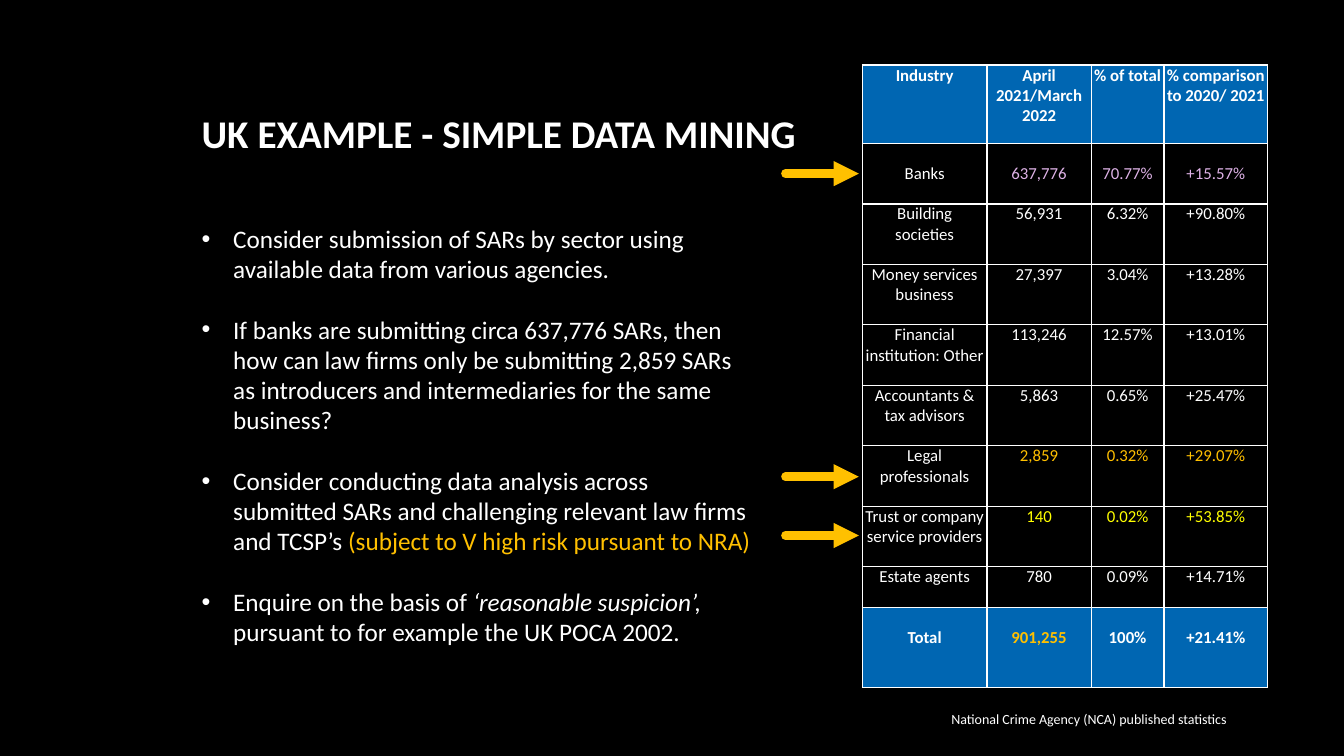
from lxml.etree import SubElement
from pptx import Presentation
from pptx.dml.color import RGBColor
from pptx.enum.shapes import MSO_CONNECTOR as Connector
from pptx.enum.text import MSO_ANCHOR as Anchor, PP_ALIGN as Align
from pptx.oxml.ns import qn
from pptx.util import Pt

WHITE = RGBColor(0xFF, 0xFF, 0xFF)
BLACK = RGBColor(0x00, 0x00, 0x00)
BLUE = RGBColor(0x00, 0x66, 0xB2)
AMBER = RGBColor(0xFF, 0xC0, 0x00)
YELLOW = RGBColor(0xFF, 0xFF, 0x00)
LILAC = RGBColor(0xDE, 0xB2, 0xE6)


def style_font(font, size, color=WHITE, bold=False):
    font.name = "Calibri"
    font.size = Pt(size)
    font.color.rgb = color
    font.bold = bold


def add_text_frame(left, top, width, height):
    box = slide.shapes.add_textbox(Pt(left), Pt(top), Pt(width), Pt(height))
    box.text_frame.word_wrap = True
    return box.text_frame


presentation = Presentation()
presentation.slide_width = Pt(960)
presentation.slide_height = Pt(540)
slide = presentation.slides.add_slide(presentation.slide_layouts[6])
slide.background.fill.solid()
slide.background.fill.fore_color.rgb = BLACK

# Title
title = add_text_frame(137, 54.5, 639, 60.5)
title.vertical_anchor = Anchor.BOTTOM
title.text = "UK EXAMPLE - SIMPLE DATA MINING"
style_font(title.paragraphs[0].runs[0].font, 28, bold=True)

# Bullets: each is a list of (text, color, italic) runs
bullets = [
    [("Consider submission of SARs by sector using available data from various agencies.", WHITE, False)],
    [("If banks are submitting circa 637,776 SARs, then how can law firms only be submitting "
      "2,859 SARs as introducers and intermediaries for the same business?", WHITE, False)],
    [("Consider conducting data analysis across submitted SARs and challenging relevant law firms "
      "and TCSP’s ", WHITE, False),
     ("(subject to V high risk pursuant to NRA)", AMBER, False)],
    [("Enquire on the basis of ", WHITE, False),
     ("‘reasonable suspicion’, ", WHITE, True),
     ("pursuant to for example the UK POCA 2002.", WHITE, False)],
]
body = add_text_frame(137, 156, 410.5, 376)
for index, bullet in enumerate(bullets):
    paragraph = body.paragraphs[0] if index == 0 else body.add_paragraph()
    if index:
        paragraph.space_before = Pt(21.6)
    properties = paragraph._p.get_or_add_pPr()
    properties.set("marL", str(Pt(22.5)))
    properties.set("indent", str(-Pt(22.5)))
    SubElement(properties, qn("a:buFont"), typeface="Arial")
    SubElement(properties, qn("a:buChar"), char="•")
    for text, color, italic in bullet:
        run = paragraph.add_run()
        run.text = text
        style_font(run.font, 18, color)
        run.font.italic = italic

# Table of SARs by industry
rows = [
    ["Industry", "April 2021/March 2022", "% of total", "% comparison to 2020/ 2021"],
    ["Banks", "637,776", "70.77%", "+15.57%"],
    ["Building\nsocieties", "56,931", "6.32%", "+90.80%"],
    ["Money services business", "27,397", "3.04%", "+13.28%"],
    ["Financial institution: Other", "113,246", "12.57%", "+13.01%"],
    ["Accountants &\ntax advisors", "5,863", "0.65%", "+25.47%"],
    ["Legal professionals", "2,859", "0.32%", "+29.07%"],
    ["Trust or company service providers", "140", "0.02%", "+53.85%"],
    ["Estate agents", "780", "0.09%", "+14.71%"],
    ["Total", "901,255", "100%", "+21.41%"],
]
column_widths = [89, 74.5, 52, 74]
row_heights = [56] + [43.2] * 7 + [28.8, 57.6]
value_colors = {"Banks": LILAC, "Legal professionals": AMBER,
                "Trust or company service providers": YELLOW}
table = slide.shapes.add_table(len(rows), 4, Pt(616), Pt(46.5),
                               Pt(sum(column_widths)), Pt(sum(row_heights))).table
for column, width in zip(table.columns, column_widths):
    column.width = Pt(width)
for row_index, values in enumerate(rows):
    table.rows[row_index].height = Pt(row_heights[row_index])
    industry = values[0]
    emphasized = industry in ("Industry", "Total")
    for column_index, value in enumerate(values):
        cell = table.cell(row_index, column_index)
        cell.margin_left = cell.margin_right = cell.margin_bottom = 0
        cell.margin_top = Pt(14.4) if industry in ("Banks", "Total") else 0
        for side in ("a:lnL", "a:lnR", "a:lnT", "a:lnB"):
            border = SubElement(cell._tc.get_or_add_tcPr(), qn(side), w=str(Pt(1)))
            border_fill = SubElement(border, qn("a:solidFill"))
            SubElement(border_fill, qn("a:srgbClr"), val=str(WHITE))
        if emphasized:
            cell.fill.solid()
            cell.fill.fore_color.rgb = BLUE
        else:
            cell.fill.background()
        color = value_colors.get(industry, WHITE) if column_index else WHITE
        if value == "901,255":
            color = AMBER
        cell.text_frame.text = value
        for paragraph in cell.text_frame.paragraphs:
            paragraph.alignment = Align.CENTER
            style_font(paragraph.runs[0].font, 12, color, emphasized)

# Source note
note = add_text_frame(672.5, 504, 287.5, 19.5)
note.text = "National Crime Agency (NCA) published statistics"
style_font(note.paragraphs[0].runs[0].font, 10)

# Arrows to the banks, legal and trust rows
for y in (124, 340.5, 382.5):
    arrow = slide.shapes.add_connector(Connector.STRAIGHT, Pt(561), Pt(y), Pt(613.5), Pt(y))
    arrow.line.color.rgb = AMBER
    arrow.line.width = Pt(6)
    line = arrow.line._get_or_add_ln()
    line.set("cap", "rnd")
    SubElement(line, qn("a:tailEnd"), type="triangle")
    SubElement(arrow._element.spPr, qn("a:effectLst"))

presentation.save("out.pptx")
